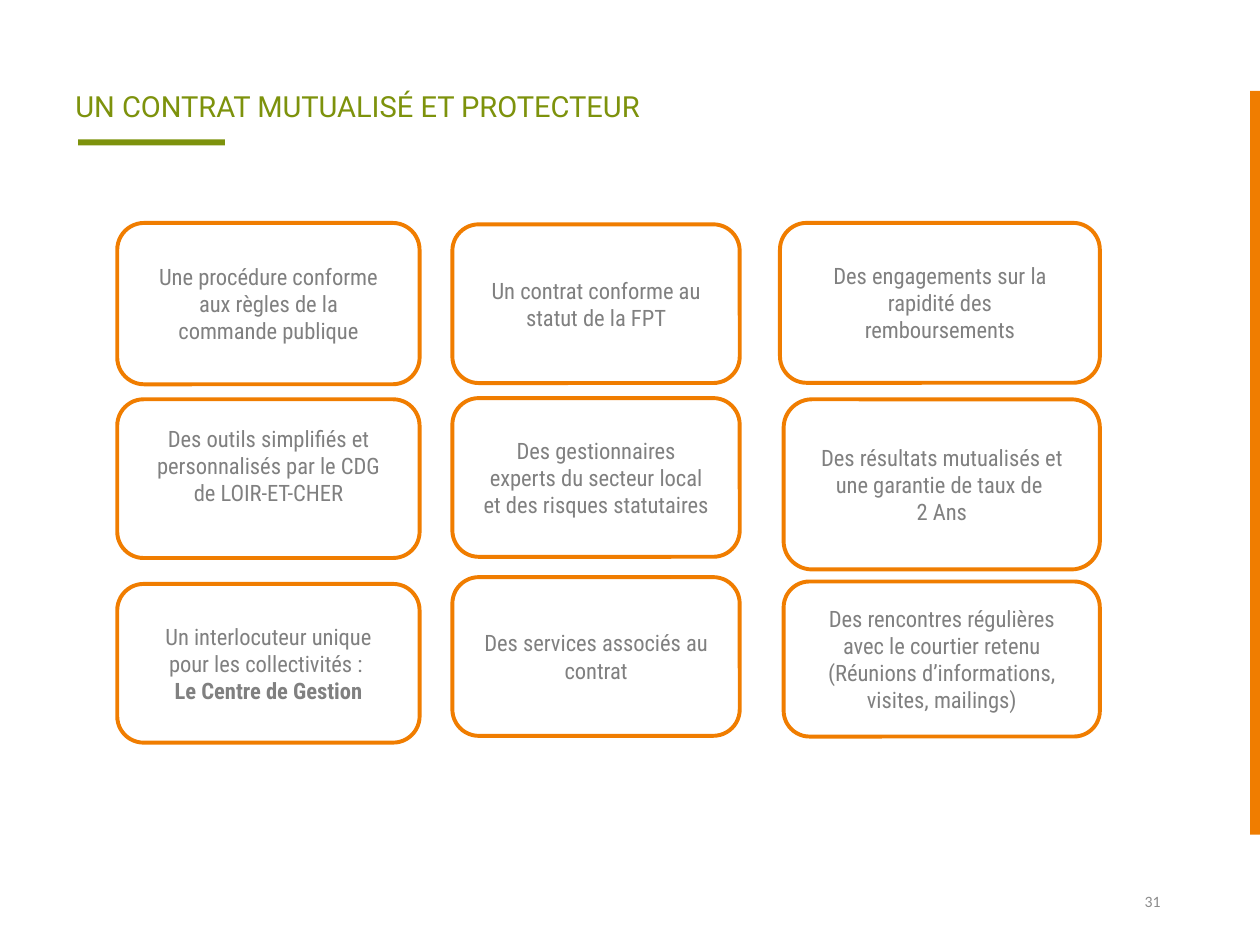
from dataclasses import dataclass

from pptx import Presentation
from pptx.dml.color import RGBColor
from pptx.enum.shapes import MSO_SHAPE
from pptx.enum.text import MSO_ANCHOR, PP_ALIGN
from pptx.util import Pt

RECTANGLE = MSO_SHAPE.RECTANGLE
ROUNDED = MSO_SHAPE.ROUNDED_RECTANGLE
TOP, MIDDLE = MSO_ANCHOR.TOP, MSO_ANCHOR.MIDDLE
LEFT, CENTER, RIGHT = PP_ALIGN.LEFT, PP_ALIGN.CENTER, PP_ALIGN.RIGHT


@dataclass(frozen=True)
class Style:
    font: str
    size: float
    color: RGBColor
    bold: bool = False


@dataclass(frozen=True)
class Theme:
    green = RGBColor(0x7D, 0x92, 0x0C)
    orange = RGBColor(0xF0, 0x7D, 0x00)
    title = Style("Roboto", 16.6, green)
    card = Style("Roboto Condensed", 12.9, RGBColor(0x80, 0x80, 0x80))
    strong = Style("Roboto Condensed", 12.9, RGBColor(0x80, 0x80, 0x80), True)
    number = Style("Calibri", 9, RGBColor(0x8C, 0x8C, 0x8C))
    outline = 2.25
    inset = 13


THEME = Theme()

# Left edge and width of each column of cards
PROCESS, SERVICE, RESULT = (67, 172.8), (258.5, 164.2), (447.8, 180.7)

# Column, top, height, paragraphs, extra bottom inset
CARDS = [
    (PROCESS, 127.4, 92.2,
     [("Une procédure conforme aux règles de la commande publique", THEME.card)], 0),
    (SERVICE, 128.2, 90.7,
     [("Un contrat conforme au statut de la FPT", THEME.card)], 0),
    ((445.7, 182.8), 127.4, 91.4,
     [("Des engagements sur la rapidité des remboursements", THEME.card)], 0),
    (PROCESS, 228.2, 90.7,
     [("Des outils simplifiés et personnalisés par le CDG de LOIR-ET-CHER",
       THEME.card)], 15.5),
    (SERVICE, 227.5, 90.7,
     [("Des gestionnaires experts du secteur local et des risques statutaires",
       THEME.card)], 0),
    (RESULT, 228.2, 97.2,
     [("Des résultats mutualisés et une garantie de taux de ", THEME.card),
      ("2 Ans", THEME.card)], 0),
    (PROCESS, 333.7, 90.7,
     [("Un interlocuteur unique pour les collectivités : ", THEME.card),
      ("Le Centre de Gestion", THEME.strong)], 0),
    (SERVICE, 329.8, 90.7,
     [("Des services associés au contrat", THEME.card)], 0),
    (RESULT, 332.3, 88.6,
     [("Des rencontres régulières avec le courtier retenu "
       "(Réunions d’informations, visites, mailings)", THEME.card)], 0),
]


def write(frame, lines, align, anchor):
    """Fill a text frame with one paragraph per (text, style) pair."""
    frame.word_wrap = True
    frame.vertical_anchor = anchor
    for index, (text, style) in enumerate(lines):
        para = frame.add_paragraph() if index else frame.paragraphs[0]
        para.text = text
        para.alignment = align
        para.font.name = style.font
        para.font.size = Pt(style.size)
        para.font.bold = style.bold
        para.font.color.rgb = style.color


def add_label(page, bounds, text, style, align, anchor):
    box = page.shapes.add_textbox(*map(Pt, bounds))
    write(box.text_frame, [(text, style)], align, anchor)


def add_bar(page, bounds, color):
    bar = page.shapes.add_shape(RECTANGLE, *map(Pt, bounds))
    bar.shadow.inherit = False
    bar.fill.solid()
    bar.fill.fore_color.rgb = color
    bar.line.fill.background()


def add_card(page, column, top, height, lines, extra_bottom):
    left, width = column
    card = page.shapes.add_shape(ROUNDED, *map(Pt, (left, top, width, height)))
    card.shadow.inherit = False
    card.fill.background()
    card.line.color.rgb = THEME.orange
    card.line.width = Pt(THEME.outline)
    frame = card.text_frame
    frame.margin_left = frame.margin_right = frame.margin_top = Pt(THEME.inset)
    frame.margin_bottom = Pt(THEME.inset + extra_bottom)
    write(frame, lines, CENTER, MIDDLE)


def main():
    deck = Presentation()
    deck.slide_width, deck.slide_height = Pt(720), Pt(540)
    page = deck.slides.add_slide(deck.slide_layouts[6])

    # Page number, title and accent bars
    add_label(page, (508.3, 500.4, 162, 28.8), "31", THEME.number, RIGHT, MIDDLE)
    add_label(page, (36, 46.8, 573.8, 27.4), "UN CONTRAT MUTUALISÉ ET PROTECTEUR",
              THEME.title, LEFT, TOP)
    add_bar(page, (44.6, 79.7, 84, 3.4), THEME.green)
    add_bar(page, (714.3, 52, 5.7, 425), THEME.orange)

    # Contract benefits
    for card in CARDS:
        add_card(page, *card)

    deck.save("out.pptx")


if __name__ == "__main__":
    main()
